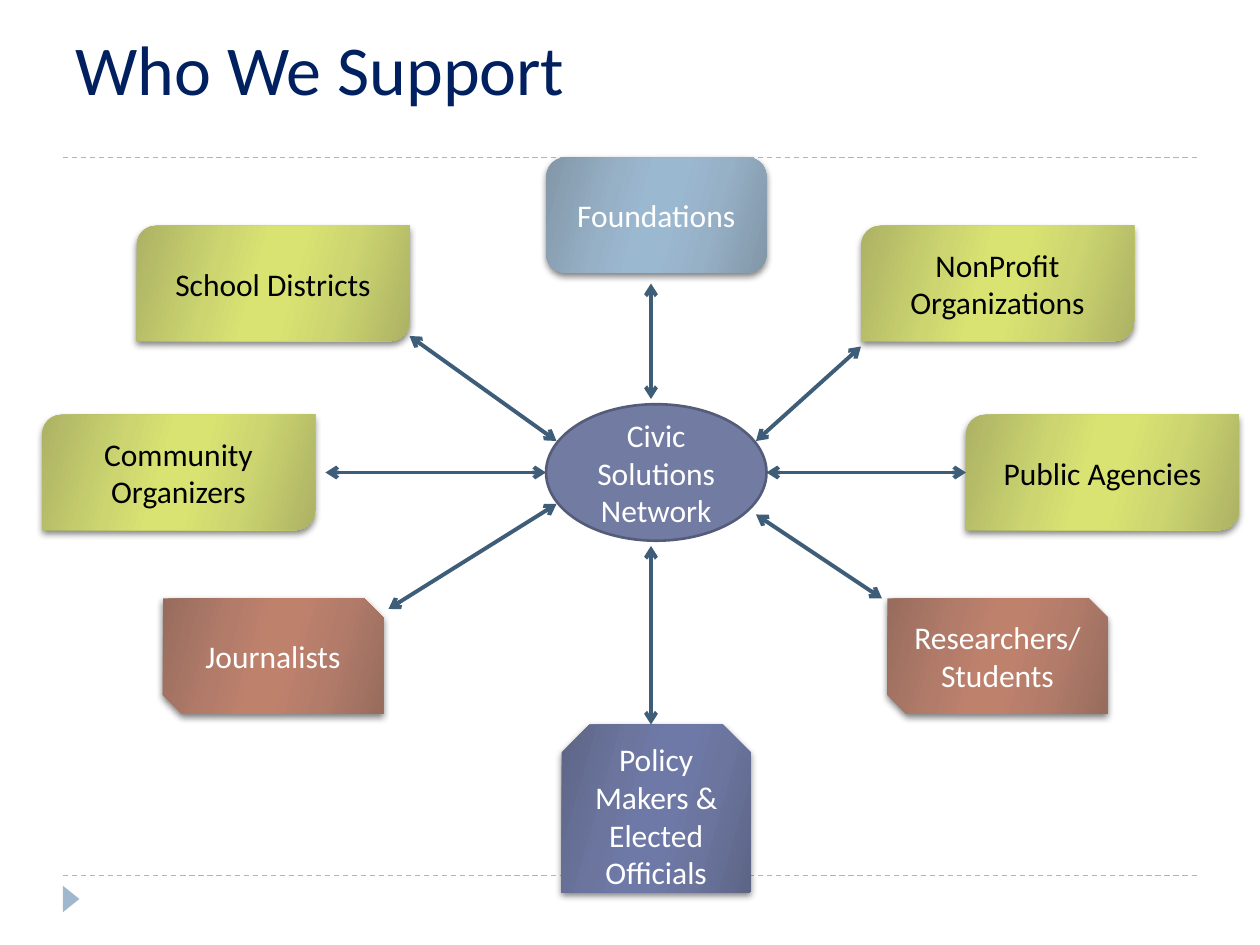
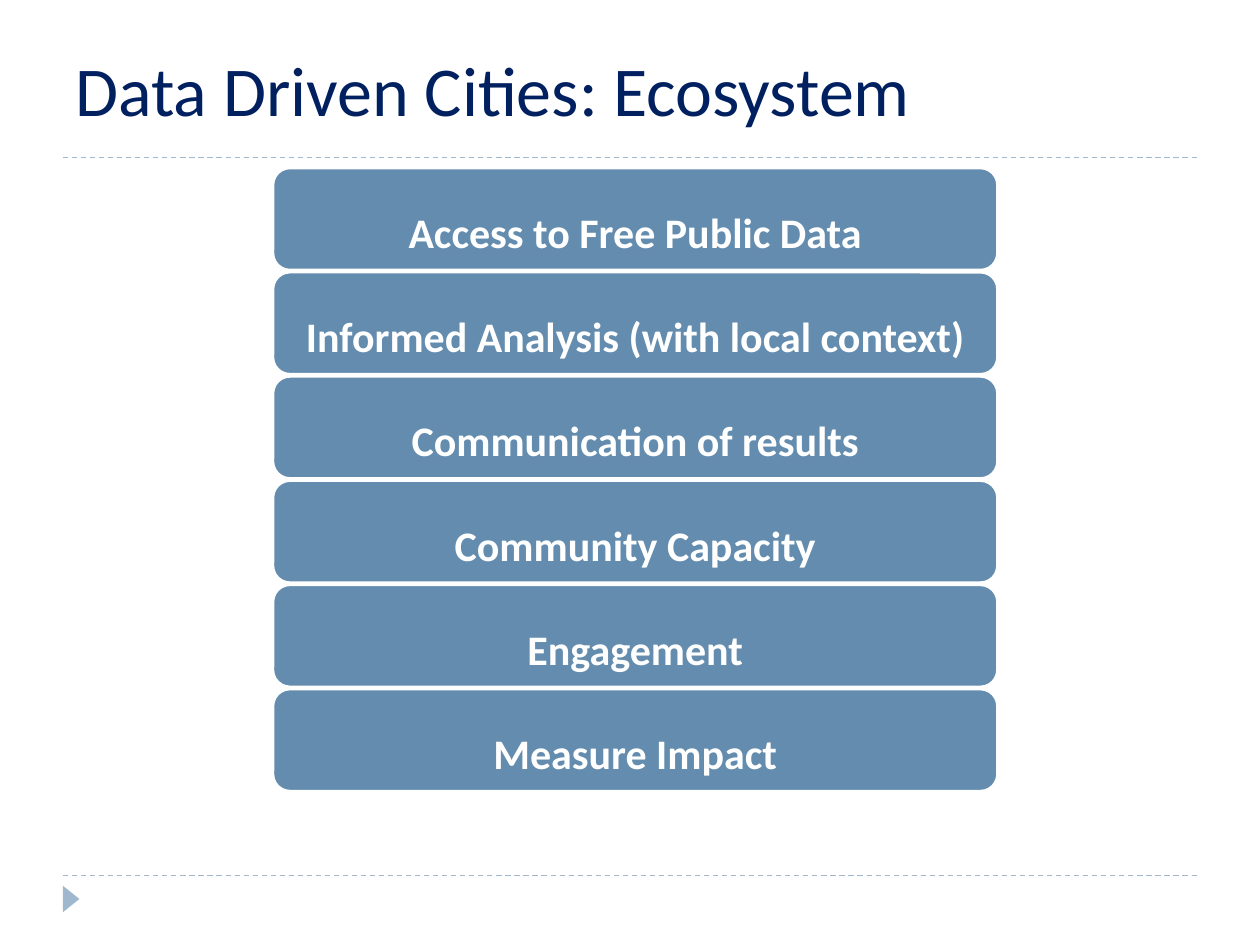
from lxml.etree import SubElement
from pptx import Presentation
from pptx.dml.color import RGBColor
from pptx.enum.dml import MSO_LINE
from pptx.enum.shapes import MSO_CONNECTOR, MSO_SHAPE
from pptx.enum.text import MSO_ANCHOR, MSO_AUTO_SIZE, PP_ALIGN
from pptx.oxml.ns import qn
from pptx.util import Pt

WHITE, BLACK, NAVY = "FFFFFF", "000000", "002060"
PALE_BLUE, STEEL, ARROW = "9FB8CD", "638CAE", "3E5D78"
HUB, HUB_LINE = "727CA3", "545C79"
LIME = ("ACB264", "CCD570", "D9E371")
RUST = ("976C5D", "B37C6A", "BE816C")
INDIGO = ("5D6585", "6B759E", "6E79A7")
SKY = ("8297A8", "96B0C6", "9BB8D1")
STOPS = ((0, 0), (30, 1), (45, 2), (55, 2), (73, 1), (100, 0))

DIAG_ROUND = MSO_SHAPE.ROUND_2_DIAG_RECTANGLE
DIAG_SNIP = MSO_SHAPE.SNIP_2_DIAG_RECTANGLE
TOP_SNIP = MSO_SHAPE.SNIP_2_SAME_RECTANGLE
ROUNDED = MSO_SHAPE.ROUNDED_RECTANGLE

PARTNERS = [
    ("Public Agencies", DIAG_ROUND, (552, 237, 156, 66), LIME, BLACK),
    ("Community Organizers", DIAG_ROUND, (24, 237, 156, 66), LIME, BLACK),
    ("School Districts", DIAG_ROUND, (78, 129, 156, 66), LIME, BLACK),
    ("NonProfit Organizations", DIAG_ROUND, (492, 129, 156, 66), LIME, BLACK),
    ("Journalists", DIAG_SNIP, (93, 342, 126, 66), RUST, WHITE),
    ("Researchers/Students", DIAG_SNIP, (507, 342, 126, 66), RUST, WHITE),
    ("Policy Makers & Elected Officials", TOP_SNIP, (321, 414, 108, 96), INDIGO, WHITE),
    ("Foundations", ROUNDED, (312, 90, 126, 66), SKY, WHITE),
]
ARROWS = [
    (234, 192, 318, 252),
    (432, 294, 504, 342),
    (432, 252, 492, 198),
    (372, 312, 372, 414),
    (372, 162, 372, 228),
    (222, 348, 318, 288),
    (186, 270, 312, 270),
]
LAYERS = [
    "Access to Free Public Data",
    "Informed Analysis (with local context)",
    "Communication of results",
    "Community Capacity",
    "Engagement",
    "Measure Impact",
]


def rgb(value):
    return RGBColor.from_string(value)


def add(parent, tag, **attrs):
    return SubElement(parent, qn(tag), {k: str(v) for k, v in attrs.items()})


def write(tf, text, size=18, color=WHITE, bold=False, align=PP_ALIGN.CENTER,
          anchor=MSO_ANCHOR.MIDDLE, spacing=None):
    tf.word_wrap = True
    tf.auto_size = MSO_AUTO_SIZE.NONE
    tf.vertical_anchor = anchor
    p = tf.paragraphs[0]
    p.alignment = align
    p.line_spacing = spacing
    r = p.add_run()
    r.text = text
    r.font.name = "Calibri"
    r.font.size = Pt(size)
    r.font.bold = bold
    r.font.color.rgb = rgb(color)


class Deck:
    def __init__(self):
        self.prs = Presentation()
        self.prs.slide_width, self.prs.slide_height = Pt(720), Pt(540)
        self.s = None

    def slide(self, title, width, height):
        self.s = self.prs.slides.add_slide(self.prs.slide_layouts[5])
        for y in (500.4, 90):
            self.line(36, y, 684, y, PALE_BLUE, 0.75).line.dash_style = MSO_LINE.DASH
        marker = self.shape(MSO_SHAPE.ISOSCELES_TRIANGLE, (33.1, 509, 15.1, 9.4), PALE_BLUE)
        marker.rotation = 90
        sp = self.s.shapes.title
        sp.left, sp.top, sp.width, sp.height = Pt(36), Pt(12), Pt(width), Pt(height)
        write(sp.text_frame, title, size=40, color=NAVY, align=PP_ALIGN.LEFT,
              anchor=MSO_ANCHOR.BOTTOM)

    def shape(self, kind, box, fill, outline=None):
        sp = self.s.shapes.add_shape(kind, *map(Pt, box))
        sp.shadow.inherit = False
        sp.fill.solid()
        sp.fill.fore_color.rgb = rgb(fill)
        if outline:
            sp.line.color.rgb = rgb(outline)
            sp.line.width = Pt(1.5)
        else:
            sp.line.fill.background()
        return sp

    def glossy(self, kind, box, tones):
        sp = self.shape(kind, box, tones[0])
        sp.fill.gradient()
        spPr = sp.element.spPr
        grad = spPr.find(qn("a:gradFill"))
        grad.clear()
        stops = add(grad, "a:gsLst")
        for pos, tone in STOPS:
            add(add(stops, "a:gs", pos=pos * 1000), "a:srgbClr", val=tones[tone])
        add(grad, "a:lin", ang=16 * 60000, scaled=0)
        shadow = add(spPr.find(qn("a:effectLst")), "a:outerShdw", blurRad=Pt(4),
                     dist=Pt(2), dir=90 * 60000, rotWithShape=0)
        add(add(shadow, "a:srgbClr", val=BLACK), "a:alpha", val=50000)
        return sp

    def line(self, x1, y1, x2, y2, color, width):
        c = self.s.shapes.add_connector(MSO_CONNECTOR.STRAIGHT, *map(Pt, (x1, y1, x2, y2)))
        c.line.color.rgb = rgb(color)
        c.line.width = Pt(width)
        add(c.element.spPr, "a:effectLst")
        return c

    def arrow(self, x1, y1, x2, y2):
        c = self.line(x1, y1, x2, y2, ARROW, 2.25)
        ln = c.element.spPr.find(qn("a:ln"))
        for end in ("a:headEnd", "a:tailEnd"):
            add(ln, end, type="arrow")
        return c


def support_slide(deck):
    deck.slide("Who We Support", 462, 54)
    hub = deck.shape(MSO_SHAPE.OVAL, (312, 231, 126, 78), HUB, HUB_LINE)
    write(hub.text_frame, "Civic Solutions Network")
    partners = {}
    for name, kind, box, tones, color in PARTNERS:
        partners[name] = deck.glossy(kind, box, tones)
        write(partners[name].text_frame, name, color=color)
    for ends in ARROWS:
        deck.arrow(*ends)
    deck.arrow(438, 270, 552, 270).end_connect(partners["Public Agencies"], 1)


def ecosystem_slide(deck):
    deck.slide("Data Driven Cities: Ecosystem", 648, 66)
    for i, layer in enumerate(LAYERS):
        sp = deck.shape(ROUNDED, (156, 96 + 59.55 * i, 414, 58.3), STEEL, WHITE)
        tf = sp.text_frame
        tf.margin_left = tf.margin_right = tf.margin_top = tf.margin_bottom = Pt(7.2)
        write(tf, layer, size=24, bold=True, spacing=1.5)


def main():
    deck = Deck()
    support_slide(deck)
    ecosystem_slide(deck)
    deck.prs.save("out.pptx")


if __name__ == "__main__":
    main()
